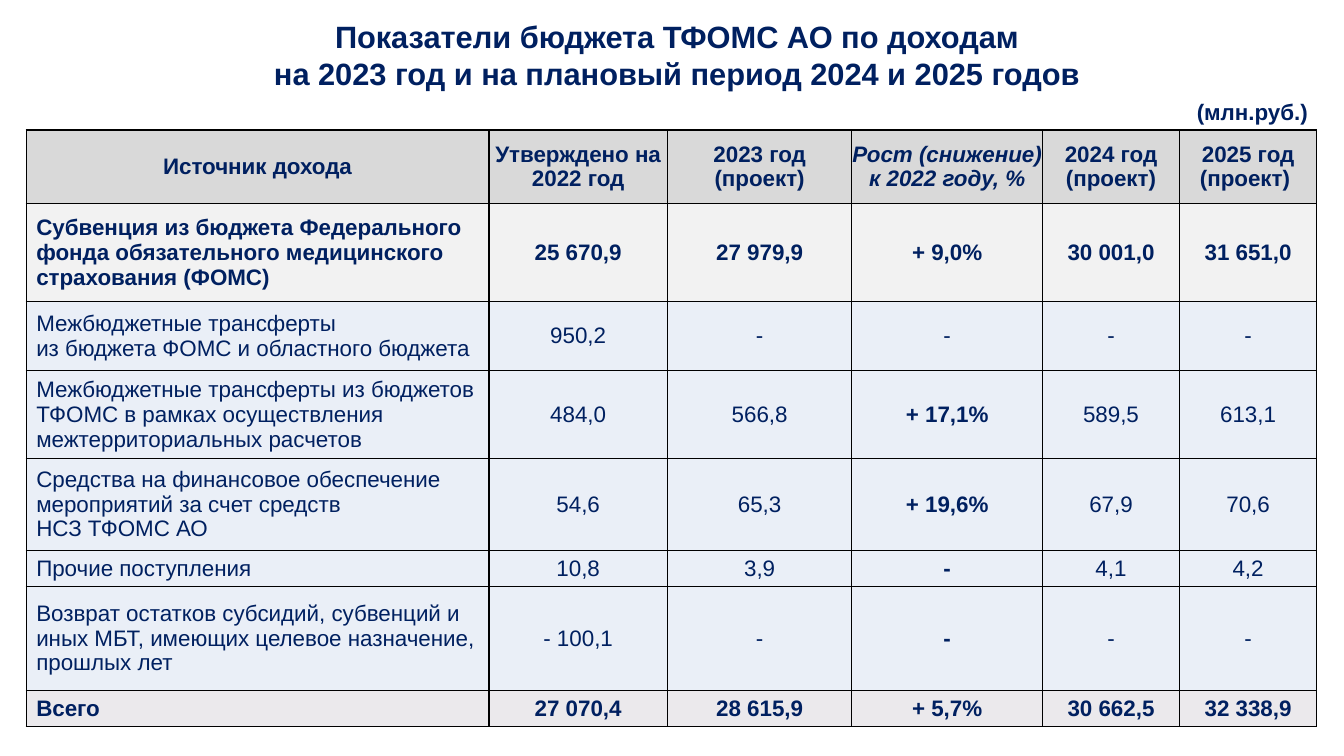
from dataclasses import dataclass

from lxml import etree
from pptx import Presentation
from pptx import util as u
from pptx.dml.color import RGBColor
from pptx.enum import text
from pptx.oxml import ns

HUES = {"ink": "002060", "head": "D9D9D9", "main": "F2F2F2",
        "item": "EAEFF7", "total": "EBE9EC", "rule": "000000"}
WIDE, TALL = 13.33, 7.5
LEFT, MID, RIGHT = text.PP_ALIGN.LEFT, text.PP_ALIGN.CENTER, text.PP_ALIGN.RIGHT
GROWTH = 3  # column of the percentage change


@dataclass
class Row:
    cells: list[str]
    high: float
    kind: str = "item"
    strong: bool = True  # growth figure in bold


# Widths and heights are percentages of the slide's size
COLS = [34.43, 13.28, 13.73, 14.18, 10.2, 10.2]
ROWS = [
    Row(["Источник дохода", "Утверждено на 2022 год", "2023 год (проект)",
         "Рост (снижение)\vк 2022 году, %", "2024 год (проект)",
         "2025 год (проект) "], 9.73, "head"),
    Row(["Субвенция из бюджета Федерального фонда обязательного медицинского "
         "страхования (ФОМС)", "25 670,9", "27 979,9", "+ 9,0%", "30 001,0",
         "31 651,0"], 12.93, "main"),
    Row(["Межбюджетные трансферты \vиз бюджета ФОМС и областного бюджета",
         "950,2", "-", "-", "-", "-"], 9.2, strong=False),
    Row(["Межбюджетные трансферты из бюджетов ТФОМС в рамках осуществления "
         "межтерриториальных расчетов", "484,0", "566,8", "+ 17,1%", "589,5",
         "613,1"], 11.6),
    Row(["Средства на финансовое обеспечение мероприятий за счет средств "
         "\vНСЗ ТФОМС АО", "54,6", "65,3", "+ 19,6%", "67,9", "70,6"], 12.13),
    Row(["Прочие поступления", "10,8", "3,9", "-", "4,1", "4,2"], 4.8),
    Row(["Возврат остатков субсидий, субвенций и иных МБТ, имеющих целевое "
         "назначение, прошлых лет", "- 100,1", "-", "-", "-", "-"], 13.73),
    Row(["Всего", "27 070,4", "28 615,9", "+ 5,7%", "30 662,5", "32 338,9"],
        4.8, "total"),
]


def across(share: float) -> int:
    return u.Inches(WIDE * share / 100)


def down(share: float) -> int:
    return u.Inches(TALL * share / 100)


def write(frame, words: str, size: int, align, bold=True, slant=False) -> None:
    frame.text = words
    frame.word_wrap = True
    for para in frame.paragraphs:
        para.alignment = align
        for run in para.runs:
            font = run.font
            font.name, font.size = "Arial", u.Pt(size)
            font.bold, font.italic = bold, slant
            font.color.rgb = RGBColor.from_string(HUES["ink"])


def border(cell) -> None:
    props = cell._tc.get_or_add_tcPr()
    for spot, side in enumerate(("lnL", "lnR", "lnT", "lnB")):
        line = etree.Element(ns.qn(f"a:{side}"), w=str(u.Pt(1)))
        fill = etree.SubElement(line, ns.qn("a:solidFill"))
        etree.SubElement(fill, ns.qn("a:srgbClr"), val=HUES["rule"])
        props.insert(spot, line)


def style(cell, row: Row, col: int) -> None:
    head = row.kind == "head"
    bold = row.kind != "item" or (col == GROWTH and row.strong)
    align = LEFT if col == 0 and not head else MID
    write(cell.text_frame, row.cells[col], 16, align, bold, head and col == GROWTH)
    cell.vertical_anchor = text.MSO_ANCHOR.MIDDLE
    cell.margin_left = cell.margin_right = u.Inches(0 if head and col else 0.1)
    cell.margin_top = cell.margin_bottom = 0
    cell.fill.solid()
    cell.fill.fore_color.rgb = RGBColor.from_string(HUES[row.kind])
    border(cell)


def budget(slide) -> None:
    """Draw the income table."""
    table = slide.shapes.add_table(
        len(ROWS), len(COLS), across(1.95), down(17.2), across(sum(COLS)),
        down(sum(row.high for row in ROWS))).table
    for col, width in enumerate(COLS):
        table.columns[col].width = across(width)
    for num, row in enumerate(ROWS):
        table.rows[num].height = down(row.high)
        for col in range(len(COLS)):
            style(table.cell(num, col), row, col)


def main() -> None:
    deck = Presentation()
    deck.slide_width, deck.slide_height = u.Inches(WIDE), u.Inches(TALL)
    slide = deck.slides.add_slide(deck.slide_layouts[5])

    title = slide.shapes.title
    title.left, title.top = across(3.9), down(1.73)
    title.width, title.height = across(92.95), down(10.53)
    write(title.text_frame, "Показатели бюджета ТФОМС АО по доходам"
          "\vна 2023 год и на плановый период 2024 и 2025 годов", 22, MID)
    title.text_frame.auto_size = text.MSO_AUTO_SIZE.NONE
    title.text_frame.vertical_anchor = text.MSO_ANCHOR.TOP

    budget(slide)

    unit = slide.shapes.add_textbox(across(82.3), down(12.27), across(15.75), down(4.93))
    write(unit.text_frame, "(млн.руб.)", 16, RIGHT)
    deck.save("out.pptx")


if __name__ == "__main__":
    main()
